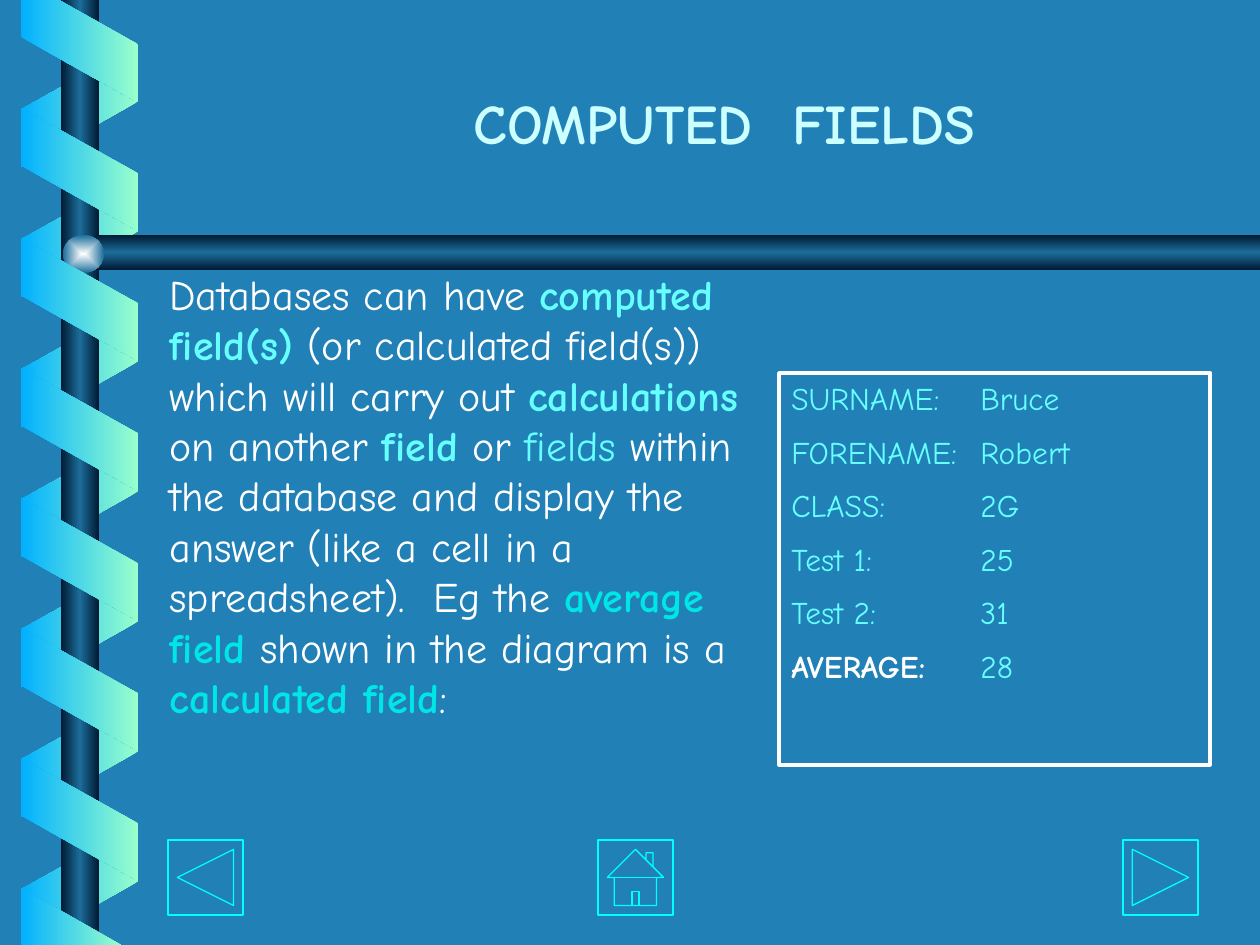
from dataclasses import dataclass

from lxml import etree
from pptx import Presentation
from pptx import util as u
from pptx.dml.color import RGBColor
from pptx.enum import shapes, text
from pptx.oxml import parse_xml
from pptx.oxml.ns import nsdecls, qn

EMU_PER_PX = 914400 / 126
PAGE_W, PAGE_H = 1260, 945
SHAPE = shapes.MSO_SHAPE


@dataclass(frozen=True)
class Theme:
    font: str = "Comic Neue"
    page: str = "2181B7"
    title: str = "CCFFFF"
    body: str = "FFFFFF"
    key: str = "66FFFF"
    accent: str = "00E5E6"
    button: str = "00FFFF"
    ribbon: tuple = ((0, "01B0FF"), (100, "99FFCC"))
    ribbon_back: tuple = ((0, "99FFCC"), (100, "01B0FF"))
    bar: tuple = ((0, "001932"), (50, "1C6D9A"), (100, "001932"))
    knob: tuple = ((0, "FEFFFF"), (100, "1C6D9A"))
    title_size: int = 32
    body_size: int = 24
    record_size: int = 18


THEME = Theme()


def px(length):
    return u.Emu(round(length * EMU_PER_PX))


def place(box):
    return [px(length) for length in box]


def set_gradient(shape, stops, angle=0, radial=False):
    """Fill a shape with a gradient that does not turn with the shape."""
    stop_xml = "".join(
        f'<a:gs pos="{pos * 1000}"><a:srgbClr val="{color}"/></a:gs>'
        for pos, color in stops)
    if radial:
        course = ('<a:path path="shape"><a:fillToRect l="50000" t="50000" '
                  'r="50000" b="50000"/></a:path>')
    else:
        course = f'<a:lin ang="{angle * 60000}" scaled="0"/>'
    shape.fill.background()
    no_fill = shape._element.spPr.find(qn("a:noFill"))
    gradient = parse_xml(f'<a:gradFill {nsdecls("a")} rotWithShape="0">'
                         f'<a:gsLst>{stop_xml}</a:gsLst>{course}</a:gradFill>')
    no_fill.getparent().replace(no_fill, gradient)


def flip(shape):
    shape._element.spPr.find(qn("a:xfrm")).set("flipH", "1")


def add_plain(page, preset, box, line=None, width=1.0):
    shape = page.shapes.add_shape(preset, *place(box))
    shape.shadow.inherit = False
    shape.fill.background()
    if line:
        shape.line.color.rgb = RGBColor.from_string(line)
        shape.line.width = u.Pt(width)
    else:
        shape.line.fill.background()
    return shape


def add_spans(para, spans, size):
    """Add runs given as (words, color, bold)."""
    for words, color, bold in spans:
        span = para.add_run()
        span.text = words
        span.font.name = THEME.font
        span.font.size = u.Pt(size)
        span.font.bold = bold
        span.font.color.rgb = RGBColor.from_string(color)


def add_ribbon(page, left, top, count, front):
    """Stack slanted bands down the page, 130 px apart."""
    for index in range(count):
        band = add_plain(page, SHAPE.PARALLELOGRAM,
                         (left, top + 130 * index, 123, 117))
        band.adjustments[0] = 0.56
        band.rotation = 270 if front else 90
        if not front:
            flip(band)
        set_gradient(band, THEME.ribbon if front else THEME.ribbon_back)


def add_ribbon_end(page, points):
    builder = page.shapes.build_freeform(*points[0], scale=EMU_PER_PX)
    builder.add_line_segments(points[1:], close=True)
    end = builder.convert_to_shape()
    end.shadow.inherit = False
    end.line.fill.background()
    set_gradient(end, THEME.ribbon)


def add_decoration(page):
    add_ribbon(page, 18, 47, 7, front=False)
    post = add_plain(page, SHAPE.RECTANGLE, (61, 0, 38, PAGE_H))
    set_gradient(post, THEME.bar)
    rail = add_plain(page, SHAPE.PENTAGON, (76, 235, PAGE_W - 76, 35))
    rail.adjustments[0] = 0.59
    flip(rail)
    set_gradient(rail, THEME.bar, angle=90)
    knob = add_plain(page, SHAPE.OVAL, (63, 235, 41, 38))
    set_gradient(knob, THEME.knob, radial=True)
    add_ribbon(page, 18, 111, 6, front=True)
    add_ribbon_end(page, [(21, 0), (21, 37), (137, 102), (137, 44), (59, 0)])
    add_ribbon_end(page, [(121, PAGE_H), (21, 888), (21, PAGE_H)])


def add_title(page, box, words):
    title = page.shapes.title
    title.left, title.top, title.width, title.height = place(box)
    frame = title.text_frame
    frame.auto_size = text.MSO_AUTO_SIZE.NONE
    frame.vertical_anchor = text.MSO_ANCHOR.BOTTOM
    para = frame.paragraphs[0]
    para.alignment = text.PP_ALIGN.CENTER
    add_spans(para, [(words, THEME.title, True)], THEME.title_size)


def add_explanation(page, box, spans):
    frame = page.shapes.add_textbox(*place(box)).text_frame
    frame.word_wrap = True
    frame.auto_size = text.MSO_AUTO_SIZE.SHAPE_TO_FIT_TEXT
    add_spans(frame.paragraphs[0], spans, THEME.body_size)


def add_record(page, box, rows):
    """Draw the framed record card, one paragraph for each field."""
    card = add_plain(page, SHAPE.RECTANGLE, box, THEME.body, 2)
    frame = card.text_frame
    frame.word_wrap = True
    frame.vertical_anchor = text.MSO_ANCHOR.TOP
    for index, spans in enumerate(rows):
        para = frame.add_paragraph() if index else frame.paragraphs[0]
        para.alignment = text.PP_ALIGN.LEFT
        if index:
            para.space_before = u.Pt(9)
        add_spans(para, spans, THEME.record_size)


def add_navigation(page, top, size, buttons):
    for preset, left in buttons:
        add_plain(page, preset, (left, top, size, size), THEME.button, 0.75)


def main():
    deck = Presentation()
    deck.slide_width, deck.slide_height = px(PAGE_W), px(PAGE_H)
    page = deck.slides.add_slide(deck.slide_layouts[5])
    page.background.fill.solid()
    page.background.fill.fore_color.rgb = RGBColor.from_string(THEME.page)

    body, key, accent = THEME.body, THEME.key, THEME.accent
    add_decoration(page)
    add_title(page, (189, 73, 1071, 89), "COMPUTED  FIELDS")
    add_explanation(page, (157, 262, 621, 471), [
        ("Databases can have ", body, False),
        ("computed field(s)", key, True),
        (" (or calculated field(s)) which will carry out ", body, False),
        ("calculations", key, True),
        (" on another ", body, False),
        ("field", key, True),
        (" or ", body, False),
        ("fields", key, False),
        (" within the database and display the answer (like a cell in a "
         "spreadsheet).  Eg the ", body, False),
        ("average field ", accent, True),
        ("shown in the diagram is a ", body, False),
        ("calculated field", accent, True),
        (":", body, False),
    ])
    fields = ["SURNAME:\tBruce", "FORENAME:\tRobert", "CLASS:\t\t2G",
              "Test 1:\t\t25", "Test 2:\t\t31"]
    rows = [[(field, key, False)] for field in fields]
    rows.append([("AVERAGE:", body, True), ("\t28", key, False)])
    add_record(page, (779, 373, 431, 392), rows)
    add_navigation(page, 840, 75, [
        (SHAPE.ACTION_BUTTON_BACK_OR_PREVIOUS, 168),
        (SHAPE.ACTION_BUTTON_HOME, 598),
        (SHAPE.ACTION_BUTTON_FORWARD_OR_NEXT, 1123),
    ])
    deck.save("out.pptx")


if __name__ == "__main__":
    main()
